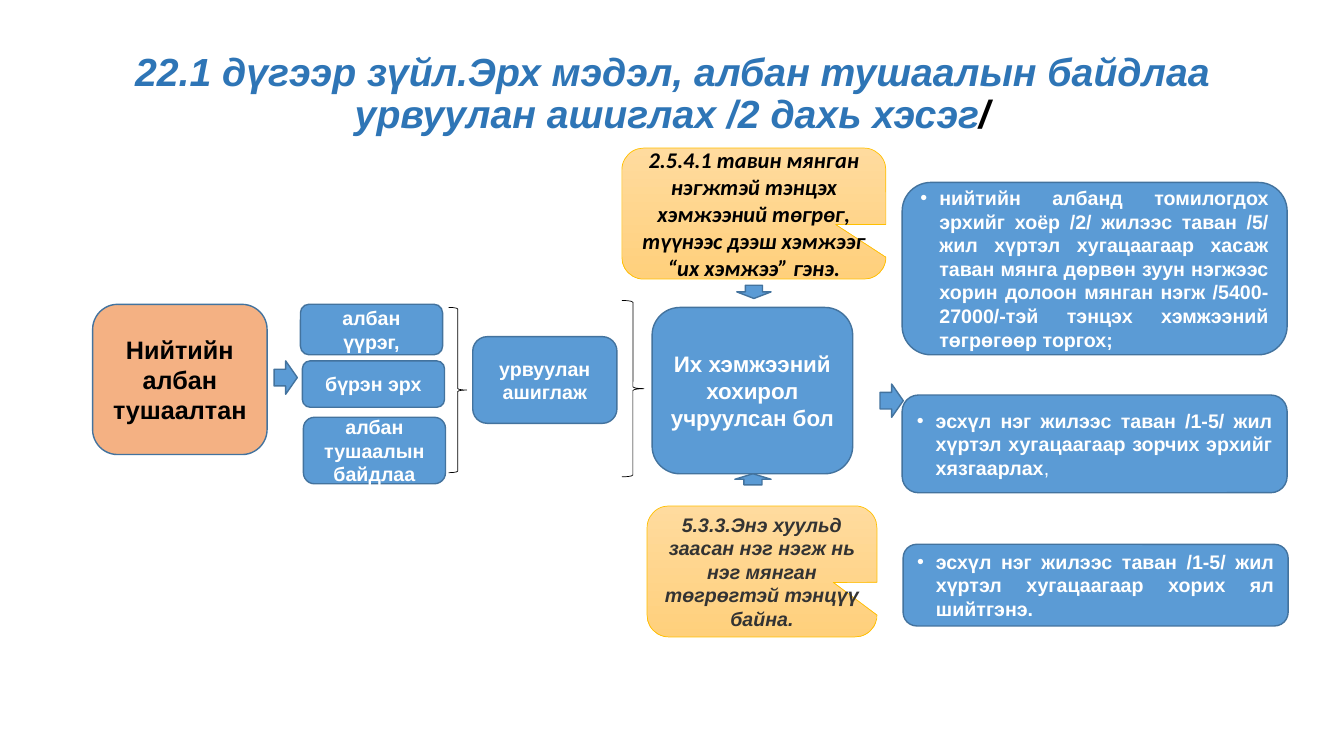
from lxml.etree import SubElement
from pptx import Presentation
from pptx.dml.color import RGBColor
from pptx.enum.shapes import MSO_SHAPE
from pptx.enum.text import MSO_ANCHOR, PP_ALIGN
from pptx.oxml.ns import qn
from pptx.util import Pt

COLORS = {
    "blue": "5B9BD5", "outline": "43739E", "peach": "F4B183", "gold": "FFC000",
    "sand_top": "FFDB9E", "sand_bottom": "FFD07C", "title": "2E75B6",
    "white": "FFFFFF", "black": "000000", "gray": "333333",
}
PENALTY_WIDTH = 275
BULLET_INDENT = 13.5


def color(name):
    """Return the palette colour with this name."""
    return RGBColor.from_string(COLORS[name])


def style_span(span, size, ink, bold=True, italic=False, font="Arial"):
    """Format one run of text."""
    span.font.name = font
    span.font.size = Pt(size)
    span.font.bold = bold
    span.font.italic = italic
    span.font.color.rgb = color(ink)


def add_span(para, text, size, ink, **style):
    """Append a formatted run to a paragraph."""
    span = para.add_run()
    span.text = text
    style_span(span, size, ink, **style)


def write(box, text, size, ink, align=PP_ALIGN.CENTER, **style):
    """Fill a box with one formatted paragraph and return it."""
    frame = box.text_frame
    frame.word_wrap = True
    frame.vertical_anchor = MSO_ANCHOR.MIDDLE
    frame.text = text
    para = frame.paragraphs[0]
    para.alignment = align
    style_span(para.runs[0], size, ink, **style)
    return para


def add_figure(page, kind, place, fill="blue", line="outline", weight=1):
    """Draw a preset shape, unfilled when fill is None."""
    shape = page.shapes.add_shape(kind, *map(Pt, place))
    shape.shadow.inherit = False
    if fill:
        shape.fill.solid()
        shape.fill.fore_color.rgb = color(fill)
    else:
        shape.fill.background()
    shape.line.color.rgb = color(line)
    shape.line.width = Pt(weight)
    return shape


def add_step(page, place, text, size=14, fill="blue", ink="white", align=PP_ALIGN.CENTER):
    """Draw a rounded box with its text and return the paragraph."""
    box = add_figure(page, MSO_SHAPE.FLOWCHART_ALTERNATE_PROCESS, place, fill)
    return write(box, text, size, ink, align)


def add_penalty(page, left, top, height, text):
    """Draw a wide box with one justified bullet and return the paragraph."""
    place = (left, top, PENALTY_WIDTH, height)
    para = add_step(page, place, text, align=PP_ALIGN.JUSTIFY)
    properties = para._p.get_or_add_pPr()
    properties.set("marL", str(Pt(BULLET_INDENT)))
    properties.set("indent", str(-Pt(BULLET_INDENT)))
    SubElement(properties, qn("a:buFont"), typeface="Arial")
    SubElement(properties, qn("a:buChar"), char="•")
    return para


def add_callout(page, place, text, size, ink, font):
    """Draw a sand-coloured callout with a definition."""
    box = add_figure(page, MSO_SHAPE.ROUNDED_RECTANGULAR_CALLOUT, place, line="gold", weight=0.5)
    for index, value in enumerate((0.31, 0.084, 0.167)):
        box.adjustments[index] = value
    box.fill.gradient()
    box.fill.gradient_angle = 270
    for stop, name in zip(box.fill.gradient_stops, ("sand_top", "sand_bottom")):
        stop.color.rgb = color(name)
    write(box, text, size, ink, italic=True, font=font)


def add_title(page):
    """Write the two-line heading."""
    box = page.shapes.add_textbox(Pt(66.2), Pt(28.8), Pt(828), Pt(104.4))
    para = write(box, "22.1 дүгээр зүйл.Эрх мэдэл, албан тушаалын байдлаа "
                 "урвуулан ашиглах /2 дахь хэсэг", 28, "title", italic=True)
    add_span(para, "/", 28, "black", italic=True)
    para.line_spacing = 0.9
    box.text_frame.vertical_anchor = MSO_ANCHOR.TOP
    box.text_frame.margin_top = Pt(8.7)


def main():
    """Build the slide and save the deck."""
    deck = Presentation()
    deck.slide_width, deck.slide_height = Pt(960), Pt(540)
    page = deck.slides.add_slide(deck.slide_layouts[6])
    add_title(page)

    add_step(page, (66.2, 217.4, 124.6, 107.3), "Нийтийн албан тушаалтан", 18, "peach", "black")
    add_step(page, (214.6, 217.4, 101.5, 36), "албан үүрэг,")
    add_step(page, (216, 257.8, 101.5, 33.1), "бүрэн эрх")
    add_step(page, (216.7, 298.1, 101.5, 47.5), "албан тушаалын байдлаа")
    add_step(page, (337.7, 240.5, 103, 61.9), "урвуулан ашиглаж")
    add_step(page, (465.8, 219.6, 143.3, 118.8), "Их хэмжээний хохирол учруулсан бол", 16)

    add_penalty(page, 644.4, 130.3, 123.1,
                "нийтийн албанд томилогдох эрхийг хоёр /2/ жилээс таван /5/ жил хүртэл "
                "хугацаагаар хасаж таван мянга дөрвөн зуун нэгжээс хорин долоон мянган "
                "нэгж /5400-27000/-тэй тэнцэх хэмжээний төгрөгөөр торгох;")
    travel = add_penalty(page, 644.4, 282.2, 69.8,
                         "эсхүл нэг жилээс таван /1-5/ жил хүртэл хугацаагаар "
                         "зорчих эрхийг хязгаарлах")
    add_span(travel, ",", 14, "white", bold=False)
    add_penalty(page, 645.1, 388.8, 58.3,
                "эсхүл нэг жилээс таван /1-5/ жил хүртэл хугацаагаар хорих ял шийтгэнэ.")

    for place in ((320.4, 219.6, 13, 118.1), (444.2, 214.6, 15.8, 126)):
        add_figure(page, MSO_SHAPE.RIGHT_BRACE, place, None, "black", 0.5)

    add_callout(page, (444.2, 105.8, 188.6, 93.6),
                "2.5.4.1 тавин мянган нэгжтэй тэнцэх хэмжээний төгрөг, түүнээс дээш "
                "хэмжээг “их хэмжээ” гэнэ.", 16, "black", "Calibri")
    add_callout(page, (462.2, 361.4, 164.2, 93.6),
                "5.3.3.Энэ хуульд заасан нэг нэгж нь нэг мянган төгрөгтэй тэнцүү байна.",
                14, "gray", "Arial")

    for kind, place in (
        (MSO_SHAPE.RIGHT_ARROW, (195.8, 257.8, 16.6, 23.8)),
        (MSO_SHAPE.RIGHT_ARROW, (628.6, 274.3, 16.6, 23.8)),
        (MSO_SHAPE.DOWN_ARROW, (526.3, 203.8, 24.5, 9.4)),
        (MSO_SHAPE.UP_ARROW, (524.9, 338.4, 25.9, 7.9)),
    ):
        add_figure(page, kind, place)

    deck.save("out.pptx")


if __name__ == "__main__":
    main()
